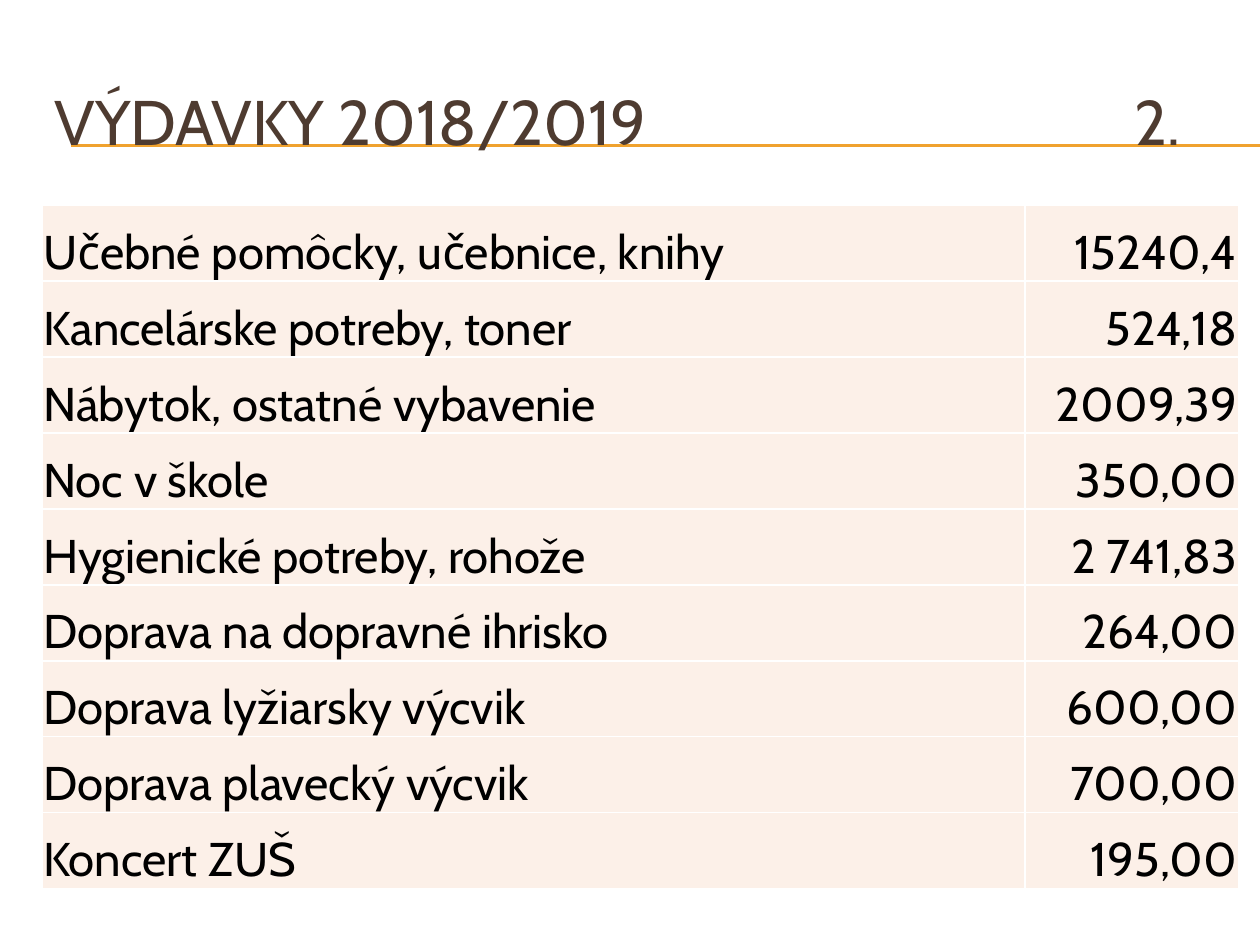
from lxml import etree
from pptx import Presentation
from pptx.dml.color import RGBColor
from pptx.enum.shapes import MSO_CONNECTOR
from pptx.enum.text import MSO_ANCHOR, MSO_AUTO_SIZE, PP_ALIGN
from pptx.oxml.ns import qn
from pptx.util import Pt

STRAIGHT = MSO_CONNECTOR.STRAIGHT
MIDDLE, BOTTOM = MSO_ANCHOR.MIDDLE, MSO_ANCHOR.BOTTOM
LEFT, RIGHT = PP_ALIGN.LEFT, PP_ALIGN.RIGHT
NO_AUTOFIT = MSO_AUTO_SIZE.NONE

FONT = "Cabin"
COLORS = {
    "title": "4E3B30",
    "rule": "F0A22E",
    "text": "000000",
    "cell": "FCF0E8",
    "border": "FFFFFF",
}
SLIDE_W, SLIDE_H = 720, 540
TABLE_LEFT, TABLE_TOP = 24, 117
COL_WIDTHS = (561.6, 122)
ROW_HEIGHT = 43.45
EXPENSES = [
    ("Učebné pomôcky, učebnice, knihy", "15240,4"),
    ("Kancelárske potreby, toner", "524,18"),
    ("Nábytok, ostatné vybavenie", "2009,39"),
    ("Noc v škole", "350,00"),
    ("Hygienické potreby, rohože", "2 741,83"),
    ("Doprava na dopravné ihrisko", "264,00"),
    ("Doprava lyžiarsky výcvik", "600,00"),
    ("Doprava plavecký výcvik", "700,00"),
    ("Koncert ZUŠ", "195,00"),
]


def rgb(name):
    return RGBColor.from_string(COLORS[name])


def format_paragraph(p, size, color, align):
    p.alignment = align
    for r in p.runs:
        r.font.name = FONT
        r.font.size = Pt(size)
        r.font.color.rgb = rgb(color)


def add_rule(s, y):
    line = s.shapes.add_connector(STRAIGHT, Pt(40.5), Pt(y), Pt(SLIDE_W), Pt(y))
    line.line.color.rgb = rgb("rule")
    line.line.width = Pt(0.75)
    etree.SubElement(line._element.spPr, qn("a:effectLst"))


def add_right_tab(p, position):
    tabs = etree.SubElement(p._p.get_or_add_pPr(), qn("a:tabLst"))
    etree.SubElement(tabs, qn("a:tab"), pos=str(Pt(position)), algn="r")


def set_title(s, text):
    sp = s.shapes.title
    sp.left, sp.top, sp.width, sp.height = Pt(24), Pt(36), Pt(684), Pt(66)
    tf = sp.text_frame
    tf.text = text
    tf.auto_size = NO_AUTOFIT
    tf.vertical_anchor = MIDDLE
    p = tf.paragraphs[0]
    format_paragraph(p, 36, "title", LEFT)
    add_right_tab(p, 643)
    s.shapes._spTree.append(sp._element)


def set_borders(cell):
    tc_pr = cell._tc.get_or_add_tcPr()
    for side in ("lnL", "lnR", "lnT", "lnB"):
        ln = etree.SubElement(tc_pr, qn(f"a:{side}"), w=str(Pt(1)))
        fill = etree.SubElement(ln, qn("a:solidFill"))
        etree.SubElement(fill, qn("a:srgbClr"), val=COLORS["border"])


def fill_cell(cell, text, align):
    set_borders(cell)
    cell.fill.solid()
    cell.fill.fore_color.rgb = rgb("cell")
    cell.margin_left = cell.margin_right = cell.margin_top = Pt(0.75)
    cell.margin_bottom = Pt(0)
    cell.vertical_anchor = BOTTOM
    cell.text_frame.text = text
    format_paragraph(cell.text_frame.paragraphs[0], 27, "text", align)


def add_expense_table(s, rows):
    frame = s.shapes.add_table(
        len(rows), len(COL_WIDTHS), Pt(TABLE_LEFT), Pt(TABLE_TOP),
        Pt(sum(COL_WIDTHS)), Pt(ROW_HEIGHT * len(rows)))
    table = frame.table
    table.first_row = table.horz_banding = False
    for column, width in zip(table.columns, COL_WIDTHS):
        column.width = Pt(width)
    for row, values in zip(table.rows, rows):
        row.height = Pt(ROW_HEIGHT)
        for cell, text, align in zip(row.cells, values, (LEFT, RIGHT)):
            fill_cell(cell, text, align)


def main():
    prs = Presentation()
    prs.slide_width, prs.slide_height = Pt(SLIDE_W), Pt(SLIDE_H)
    s = prs.slides.add_slide(prs.slide_layouts[5])
    for y in (82.8, 83.5):
        add_rule(s, y)
    set_title(s, "VÝDAVKY 2018/2019\t2.")
    add_expense_table(s, EXPENSES)
    prs.save("out.pptx")


if __name__ == "__main__":
    main()
